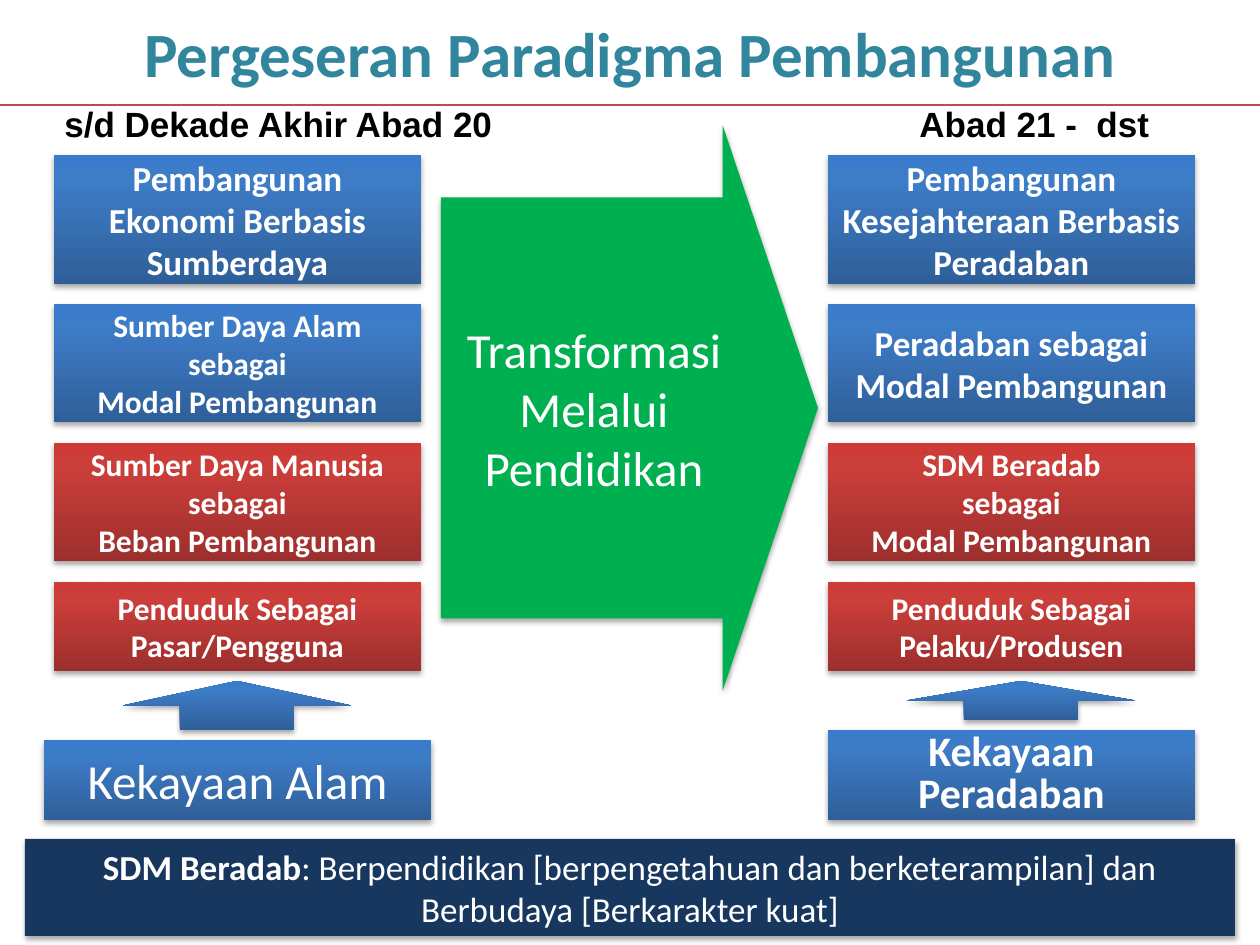
from dataclasses import dataclass
from typing import NamedTuple

from lxml import etree
from pptx import Presentation
from pptx.dml.color import RGBColor
from pptx.enum.shapes import MSO_CONNECTOR, MSO_SHAPE
from pptx.enum.text import MSO_ANCHOR, MSO_AUTO_SIZE, PP_ALIGN
from pptx.oxml import parse_xml
from pptx.oxml.ns import qn
from pptx.util import Emu, Pt

RECT = MSO_SHAPE.RECTANGLE
UP_ARROW = MSO_SHAPE.UP_ARROW
RIGHT_ARROW = MSO_SHAPE.RIGHT_ARROW
STRAIGHT = MSO_CONNECTOR.STRAIGHT
MIDDLE, TOP = MSO_ANCHOR.MIDDLE, MSO_ANCHOR.TOP
GROW, FIXED = MSO_AUTO_SIZE.SHAPE_TO_FIT_TEXT, MSO_AUTO_SIZE.NONE
CENTER, LEFT = PP_ALIGN.CENTER, PP_ALIGN.LEFT

NS = "http://schemas.openxmlformats.org/drawingml/2006/main"
EMU_PER_PX = 914400 / 126
BLUE = ("2F5F99", "3D7CC7", "3A7CCB")
RED = ("9C2F2D", "CB3E3A", "CE3B37")
GREEN, NAVY, TEAL = "00B050", "17375E", "31859C"
WHITE, BLACK, RULE = "FFFFFF", "000000", "BF4C48"


class Run(NamedTuple):
    text: str
    bold: bool = True


@dataclass
class Style:
    size: int
    color: str = WHITE
    font: str = "Calibri"
    align: PP_ALIGN = CENTER
    leading: int | None = None


@dataclass
class Box:
    x: int
    y: int
    w: int
    h: int
    fill: str | tuple[str, ...]
    paragraphs: list[list[Run]]
    style: Style
    kind: MSO_SHAPE = RECT


def px(n: int) -> Emu:
    return Emu(round(n * EMU_PER_PX))


def rgb(value: str) -> RGBColor:
    return RGBColor.from_string(value)


def lines(*texts: str, bold: bool = True) -> list[list[Run]]:
    return [[Run(text, bold)] for text in texts]


def place(sp, x: int, y: int, w: int, h: int) -> None:
    sp.left, sp.top, sp.width, sp.height = px(x), px(y), px(w), px(h)


def write(tf, paragraphs: list[list[Run]], style: Style) -> None:
    for i, runs in enumerate(paragraphs):
        p = tf.add_paragraph() if i else tf.paragraphs[0]
        p.alignment = style.align
        if style.leading:
            p.line_spacing = Pt(style.leading)
        for run in runs:
            r = p.add_run()
            r.text = run.text
            r.font.name = style.font
            r.font.size = Pt(style.size)
            r.font.bold = run.bold
            r.font.color.rgb = rgb(style.color)


def set_fill(sp, fill: str | tuple[str, ...]) -> None:
    if isinstance(fill, str):
        sp.fill.solid()
        sp.fill.fore_color.rgb = rgb(fill)
        return
    stops = "".join(
        f'<a:gs pos="{pos}"><a:srgbClr val="{color}"/></a:gs>'
        for pos, color in zip((0, 80000, 100000), fill)
    )
    grad = parse_xml(
        f'<a:gradFill xmlns:a="{NS}" rotWithShape="1"><a:gsLst>{stops}</a:gsLst>'
        '<a:lin ang="16200000" scaled="0"/></a:gradFill>'
    )
    sp._element.spPr.find(qn("a:prstGeom")).addnext(grad)


def set_shadow(sp) -> None:
    sp.shadow.inherit = False
    effects = sp._element.spPr.find(qn("a:effectLst"))
    effects.append(parse_xml(
        f'<a:outerShdw xmlns:a="{NS}" blurRad="40000" dist="23000" dir="5400000" '
        'rotWithShape="0"><a:srgbClr val="000000"><a:alpha val="35000"/>'
        '</a:srgbClr></a:outerShdw>'
    ))


def draw_box(slide, box: Box):
    sp = slide.shapes.add_shape(box.kind, px(box.x), px(box.y), px(box.w), px(box.h))
    set_fill(sp, box.fill)
    sp.line.fill.background()
    set_shadow(sp)
    tf = sp.text_frame
    tf.word_wrap = True
    tf.vertical_anchor = MIDDLE
    write(tf, box.paragraphs, box.style)
    return sp


def draw_heading(slide, x: int, w: int, text: str) -> None:
    sp = slide.shapes.add_textbox(px(x), px(96), px(w), px(55))
    sp.text_frame.word_wrap = False
    sp.text_frame.auto_size = GROW
    write(sp.text_frame, lines(text), Style(20, BLACK, "Arial", LEFT))


def draw_title(slide, text: str) -> None:
    sp = slide.shapes.title
    place(sp, 0, 0, 1260, 105)
    tf = sp.text_frame
    tf.word_wrap = True
    tf.auto_size = FIXED
    tf.vertical_anchor = MIDDLE
    write(tf, lines(text), Style(36, TEAL))


def draw_rule(slide, y: int) -> None:
    line = slide.shapes.add_connector(STRAIGHT, px(0), px(y), px(1260), px(y))
    line.line.color.rgb = rgb(RULE)
    line.line.width = Pt(0.75)
    etree.SubElement(line._element.spPr, qn("a:effectLst"))


def main() -> None:
    prs = Presentation()
    prs.slide_width, prs.slide_height = px(1260), px(945)
    slide = prs.slides.add_slide(prs.slide_layouts[5])

    big, small = Style(20), Style(18)
    rows = [(155, 129, BLUE), (304, 118, BLUE), (443, 118, RED), (582, 89, RED)]
    columns = {
        54: [
            (lines("Pembangunan Ekonomi Berbasis Sumberdaya"), big),
            (lines("Sumber Daya Alam sebagai", "Modal Pembangunan"), small),
            (lines("Sumber Daya Manusia sebagai", "Beban Pembangunan"), small),
            (lines("Penduduk Sebagai Pasar/Pengguna"), small),
        ],
        828: [
            (lines("Pembangunan Kesejahteraan Berbasis Peradaban"), big),
            (lines("Peradaban sebagai Modal Pembangunan"), big),
            (lines("SDM Beradab", "sebagai", "Modal Pembangunan"), small),
            (lines("Penduduk Sebagai Pelaku/Produsen"), small),
        ],
    }
    for x, cells in columns.items():
        for (y, h, fill), (paragraphs, style) in zip(rows, cells):
            draw_box(slide, Box(x, y, 367, h, fill, paragraphs, style))

    draw_heading(slide, 907, 257, "Abad 21 -  dst")
    draw_heading(slide, 52, 457, "s/d Dekade Akhir Abad 20")

    shift = draw_box(slide, Box(
        441, 125, 377, 566, GREEN,
        lines("Transformasi", "Melalui", "Pendidikan", bold=False),
        Style(28), RIGHT_ARROW,
    ))
    shift.adjustments[0], shift.adjustments[1] = 0.744, 0.253

    bases = [
        Box(828, 730, 367, 90, BLUE, lines("Kekayaan Peradaban"), Style(24, leading=24)),
        Box(907, 681, 228, 39, BLUE, [], small, UP_ARROW),
        Box(44, 740, 387, 80, BLUE, lines("Kekayaan Alam", bold=False), Style(28)),
        Box(123, 681, 228, 49, BLUE, [], small, UP_ARROW),
    ]
    for box in bases:
        draw_box(slide, box)

    footer = draw_box(slide, Box(25, 839, 1210, 97, NAVY, [[
        Run("SDM Beradab"),
        Run(": Berpendidikan [berpengetahuan dan berketerampilan] dan "
            "Berbudaya [Berkarakter kuat]", False),
    ]], big))
    footer.text_frame.vertical_anchor = TOP
    footer.text_frame.auto_size = GROW

    draw_title(slide, "Pergeseran Paradigma Pembangunan")
    draw_rule(slide, 105)
    prs.save("out.pptx")


if __name__ == "__main__":
    main()
